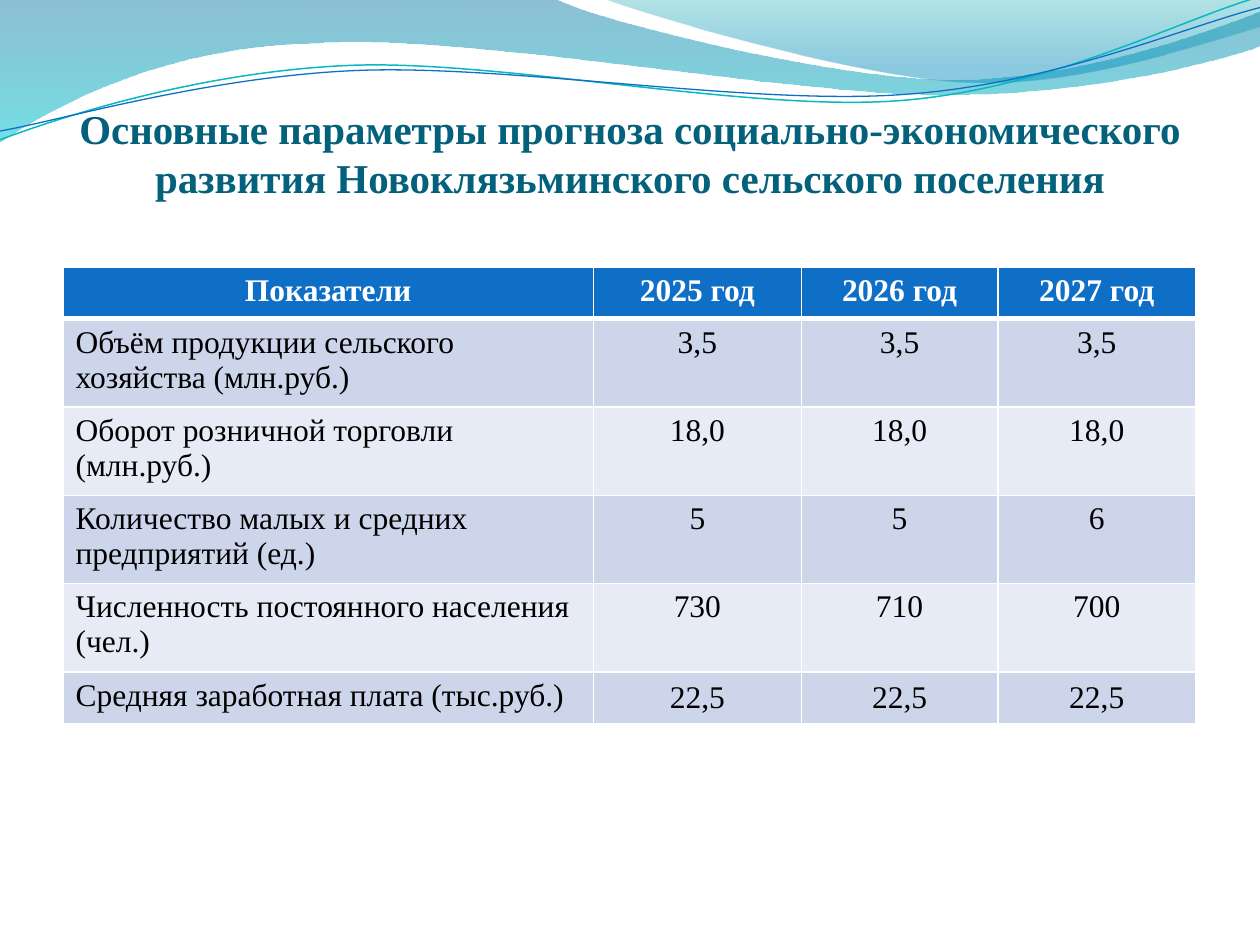
from pptx import Presentation
from pptx.dml.color import RGBColor
from pptx.enum.text import MSO_ANCHOR, PP_ALIGN
from pptx.oxml.ns import qn
from pptx.util import Inches, Pt
from lxml.etree import SubElement

FONT = "Times New Roman"
WHITE = RGBColor(0xFF, 0xFF, 0xFF)
BLACK = RGBColor(0x00, 0x00, 0x00)
TITLE_COLOR = RGBColor(0x04, 0x61, 0x7B)
BLUE = RGBColor(0x0F, 0x6F, 0xC6)
TEAL = RGBColor(0x0A, 0xB8, 0xBF)
BANDS = [RGBColor(0xE7, 0xEB, 0xF5), RGBColor(0xCC, 0xD5, 0xEA)]
DEEP_BLUE = RGBColor(0x00, 0x74, 0xA1)
CYAN = RGBColor(0x00, 0xC6, 0xCF)
SEA_GREEN = RGBColor(0x00, 0xA1, 0xA9)
SKY_BLUE = RGBColor(0x00, 0x8B, 0xBF)


def draw_wave(shapes, start, segments, close):
    """Draw an outline; a segment holds one point (line) or three (Bezier curve)."""
    ends = [(Inches(segment[-2]), Inches(segment[-1])) for segment in segments]
    builder = shapes.build_freeform(Inches(start[0]), Inches(start[1]))
    builder.add_line_segments(ends, close=close)
    wave = builder.convert_to_shape()
    wave.shadow.inherit = False
    # Turn the straight pieces into curves where control points are given
    pieces = list(wave._element.iter(qn("a:lnTo")))
    for piece, segment in zip(pieces, segments):
        if len(segment) == 2:
            continue
        curve = SubElement(piece.getparent(), qn("a:cubicBezTo"))
        for x, y in zip(segment[::2], segment[1::2]):
            SubElement(curve, qn("a:pt"), x=str(Inches(x) - wave.left),
                       y=str(Inches(y) - wave.top))
        piece.getparent().replace(piece, curve)
    return wave


def write(para, text, size, color, bold):
    span = para.add_run()
    span.text = text
    span.font.name = FONT
    span.font.size = Pt(size)
    span.font.bold = bold
    span.font.color.rgb = color


deck = Presentation()
deck.slide_width, deck.slide_height = Inches(10), Inches(7.5)
page = deck.slides.add_slide(deck.slide_layouts[6])

# Filled waves: start, segments, gradient stops (position, colour, opacity %)
filled_waves = [
    ((0, 0),
     [(4.4, -0.01), (4.76, 0.17, 6.64, 0.63, 7.58, 0.63),
      (8.53, 0.63, 9.58, 0.26, 10, 0.09), (10.01, 0.36),
      (9.83, 0.44, 8.7, 0.76, 7.46, 0.75), (6.22, 0.75, 3.82, 0.28, 2.57, 0.34),
      (1.29, 0.36, 0.46, 0.83, -0.01, 1.13)],
     [(0, DEEP_BLUE, 45), (1, CYAN, 55)]),
    ((4.79, -0.01),
     [(5.09, 0.11, 6.82, 0.62, 7.69, 0.65), (8.56, 0.69, 9.61, 0.32, 10, 0.21),
      (10, 0)],
     [(0, SEA_GREEN, 30), (0.8, SKY_BLUE, 45)]),
]
for start, segments, stops in filled_waves:
    wave = draw_wave(page.shapes, start, segments, close=True)
    wave.line.fill.background()
    wave.fill.gradient()
    wave.fill.gradient_angle = 270
    for stop, (position, color, _) in zip(wave.fill.gradient_stops, stops):
        stop.position = position
        stop.color.rgb = color
    for node, (_, _, opacity) in zip(wave._element.iter(qn("a:srgbClr")), stops):
        SubElement(node, qn("a:alpha")).set("val", str(opacity * 1000))

line_waves = [
    ((0, 1.11),
     [(0.48, 0.93, 1.58, 0.57, 2.77, 0.52), (3.95, 0.47, 5.93, 0.89, 7.13, 0.8),
      (8.33, 0.71, 9.38, 0.15, 9.98, -0.02)], TEAL, 0.85),
    ((0, 1.04),
     [(0.47, 0.96, 1.64, 0.61, 2.83, 0.56), (4.03, 0.51, 5.97, 0.84, 7.17, 0.75),
      (8.36, 0.67, 9.41, 0.21, 10, 0.06)], BLUE, 0.75),
]
for start, segments, color, width in line_waves:
    wave = draw_wave(page.shapes, start, segments, close=False)
    wave.fill.background()
    wave.line.color.rgb = color
    wave.line.width = Pt(width)

# Title
title = page.shapes.add_textbox(Inches(0.5), Inches(0.77), Inches(9), Inches(1.25))
frame = title.text_frame
frame.word_wrap = True
frame.margin_left = frame.margin_right = frame.margin_bottom = 0
frame.margin_top = Inches(0.05)
para = frame.paragraphs[0]
para.alignment = PP_ALIGN.CENTER
write(para, "Основные параметры прогноза социально-экономического развития "
      "Новоклязьминского сельского поселения", 23.4, TITLE_COLOR, True)

# Table of indicators; two-line rows grow to fit their text
rows = [
    ("Показатели", "2025 год", "2026 год", "2027 год"),
    ("Объём продукции сельского хозяйства (млн.руб.)", "3,5", "3,5", "3,5"),
    ("Оборот розничной торговли (млн.руб.)", "18,0", "18,0", "18,0"),
    ("Количество малых и средних предприятий (ед.)", "5", "5", "6"),
    ("Численность постоянного населения (чел.)", "730", "710", "700"),
    ("Средняя заработная плата (тыс.руб.)", "22,5", "22,5", "22,5"),
]
column_widths = [4.21, 1.65, 1.56, 1.57]
row_height = Inches(0.41)
table = page.shapes.add_table(
    len(rows), len(column_widths), Inches(0.5), Inches(2.12),
    Inches(sum(column_widths)), row_height * len(rows)).table
for column, width in zip(table.columns, column_widths):
    column.width = Inches(width)

last = len(rows) - 1
for r, texts in enumerate(rows):
    for c, text in enumerate(texts):
        cell = table.cell(r, c)
        properties = cell._tc.get_or_add_tcPr()
        for side in "LRTB":
            thick = (r, side) in [(0, "B"), (1, "T")]
            border = SubElement(properties, qn(f"a:ln{side}"), w=str(Pt(3 if thick else 1)))
            fill = SubElement(border, qn("a:solidFill"))
            SubElement(fill, qn("a:srgbClr"), val=str(WHITE))
        cell.fill.solid()
        cell.fill.fore_color.rgb = BLUE if r == 0 else BANDS[r % 2]
        if r == last and c > 0:
            cell.vertical_anchor = MSO_ANCHOR.MIDDLE
            cell.margin_left = cell.margin_right = 0
            cell.margin_top = cell.margin_bottom = 0
        para = cell.text_frame.paragraphs[0]
        para.alignment = PP_ALIGN.CENTER if r == 0 or c > 0 else PP_ALIGN.LEFT
        write(para, text, 18, WHITE if r == 0 else BLACK, r == 0)

deck.save("out.pptx")
